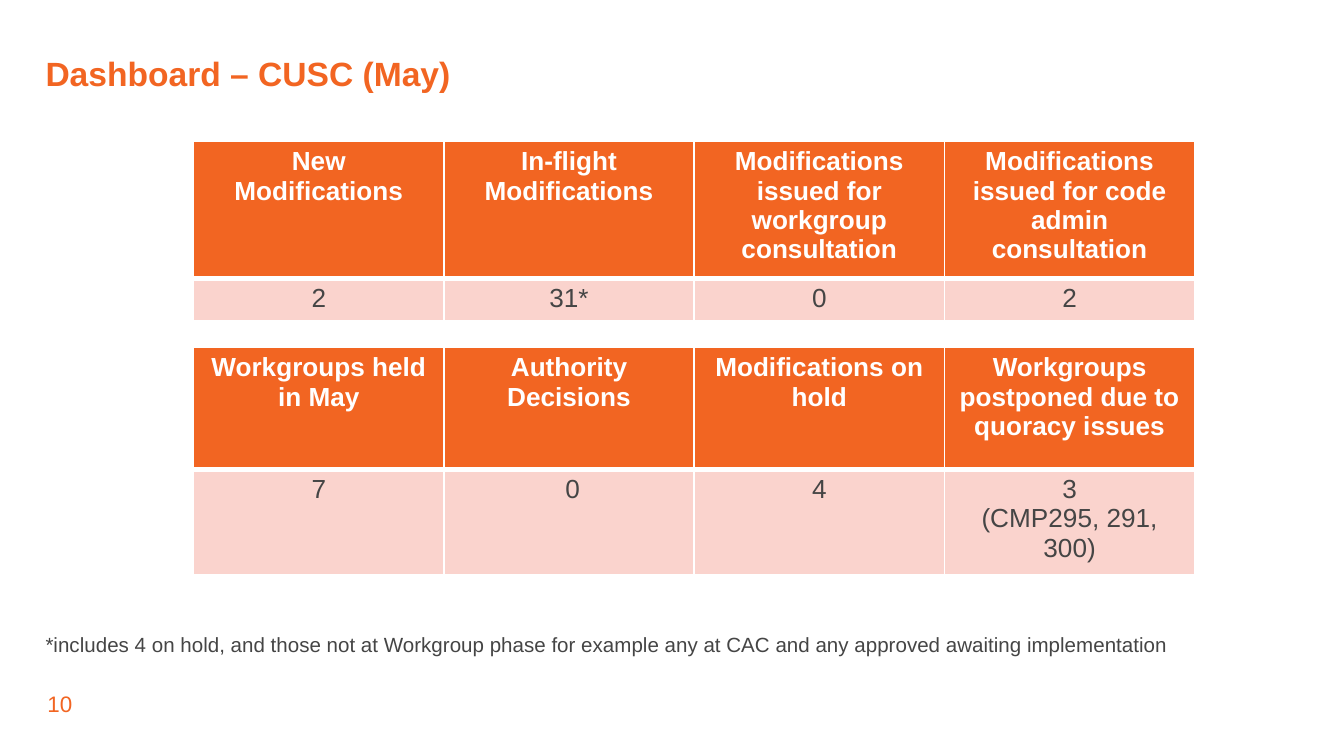
from dataclasses import dataclass

import pptx
import pptx.dml.color
import pptx.enum.text
import pptx.oxml
import pptx.oxml.ns
import pptx.util

Pt = pptx.util.Pt
ALIGN = pptx.enum.text.PP_ALIGN

COLOURS = {
    "orange": "F26522",
    "pink": "FAD3CD",
    "grey": "454545",
    "white": "FFFFFF",
}
TABLE_LEFT = 103.75
COLUMN_WIDTH = 134.1


@dataclass
class TextStyle:
    size: float
    colour: str
    bold: bool = False


@dataclass
class Label:
    text: str
    left: float
    top: float
    width: float
    height: float
    style: TextStyle
    line_spacing: float = 1.0


@dataclass
class RowStyle:
    fill: str
    text: TextStyle
    borders: dict[str, float]


@dataclass
class Dashboard:
    top: float
    row_heights: tuple[float, float]
    headings: list[str]
    values: list[str]


HEADING_ROW = RowStyle("orange", TextStyle(14, "white", True),
                       {"lnL": 1, "lnR": 1, "lnT": 1, "lnB": 3})
VALUE_ROW = RowStyle("pink", TextStyle(14, "grey"),
                     {"lnL": 1, "lnR": 1, "lnT": 3, "lnB": 1})

LABELS = [
    Label("10", 25.4, 370, 65.5, 14.4, TextStyle(12, "orange")),
    Label("Dashboard – CUSC (May)", 24.4, 32.4, 637, 27.4,
          TextStyle(18, "orange", True), 0.8),
    Label("*includes 4 on hold, and those not at Workgroup phase for example "
          "any at CAC and any approved awaiting implementation",
          24.4, 338.6, 657.4, 13.7, TextStyle(11, "grey")),
]
DASHBOARDS = [
    Dashboard(75.8, (72, 22.3),
              ["New Modifications", "In-flight Modifications",
               "Modifications issued for workgroup consultation",
               "Modifications issued for code admin consultation"],
              ["2", "31*", "0", "2"]),
    Dashboard(186.1, (65.2, 55.8),
              ["Workgroups held in May", "Authority Decisions",
               "Modifications on hold",
               "Workgroups postponed due to quoracy issues"],
              ["7", " 0", "4", "3\n(CMP295, 291, 300)"]),
]


def rgb(colour: str) -> pptx.dml.color.RGBColor:
    return pptx.dml.color.RGBColor.from_string(COLOURS[colour])


def write_text(frame, text: str, style: TextStyle, **para_format) -> None:
    """Write each line of text as a paragraph in one style."""
    frame.text = text
    font_format = {"name": "Arial", "size": Pt(style.size), "bold": style.bold}
    for para in frame.paragraphs:
        for name, value in para_format.items():
            setattr(para, name, value)
        for span in para.runs:
            for name, value in font_format.items():
                setattr(span.font, name, value)
            span.font.color.rgb = rgb(style.colour)


def add_label(page, label: Label) -> None:
    box = page.shapes.add_textbox(Pt(label.left), Pt(label.top),
                                  Pt(label.width), Pt(label.height))
    frame = box.text_frame
    frame.word_wrap = True
    for side in ("left", "top", "right", "bottom"):
        setattr(frame, f"margin_{side}", 0)
    write_text(frame, label.text, label.style, line_spacing=label.line_spacing)


def add_borders(cell, borders: dict[str, float]) -> None:
    """Add white cell borders; the schema needs them ahead of the fill."""
    properties = cell._tc.get_or_add_tcPr()
    for tag, width in borders.items():
        properties.append(pptx.oxml.parse_xml(
            f'<a:{tag} {pptx.oxml.ns.nsdecls("a")} w="{Pt(width)}"><a:solidFill>'
            f'<a:srgbClr val="{COLOURS["white"]}"/></a:solidFill></a:{tag}>'))


def add_dashboard(page, dashboard: Dashboard) -> None:
    count = len(dashboard.headings)
    table = page.shapes.add_table(
        2, count, Pt(TABLE_LEFT), Pt(dashboard.top),
        Pt(COLUMN_WIDTH * count), Pt(sum(dashboard.row_heights))).table
    for column in table.columns:
        column.width = Pt(COLUMN_WIDTH)
    rows = zip(table.rows, dashboard.row_heights,
               (dashboard.headings, dashboard.values), (HEADING_ROW, VALUE_ROW))
    for row, height, texts, style in rows:
        row.height = Pt(height)
        for cell, text in zip(row.cells, texts):
            add_borders(cell, style.borders)
            cell.fill.solid()
            cell.fill.fore_color.rgb = rgb(style.fill)
            cell.margin_top = cell.margin_bottom = Pt(3)
            write_text(cell.text_frame, text, style.text, alignment=ALIGN.CENTER)


def main() -> None:
    deck = pptx.Presentation()
    deck.slide_width, deck.slide_height = Pt(720), Pt(405)
    page = deck.slides.add_slide(deck.slide_layouts[6])
    for label in LABELS:
        add_label(page, label)
    for dashboard in DASHBOARDS:
        add_dashboard(page, dashboard)
    deck.save("out.pptx")


if __name__ == "__main__":
    main()
